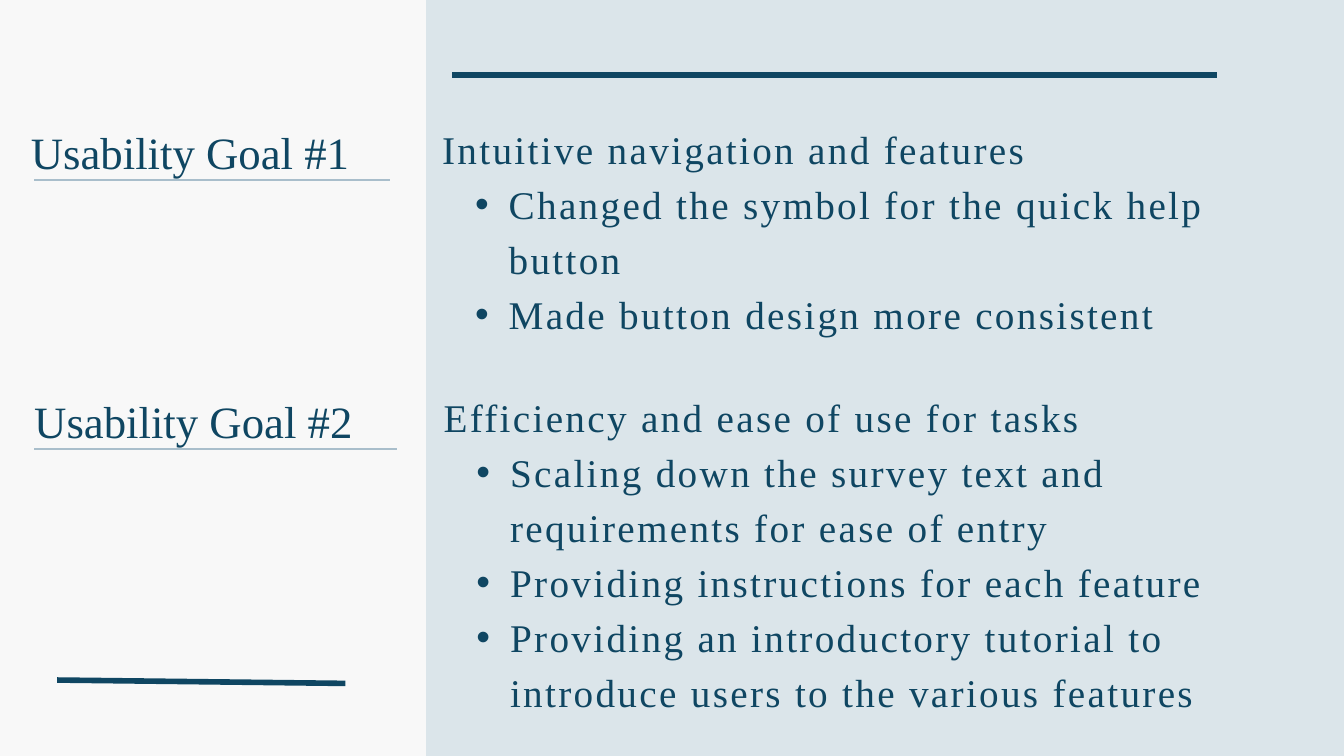
from dataclasses import dataclass

from lxml.etree import SubElement
from pptx import Presentation
from pptx.dml.color import RGBColor
from pptx.enum.shapes import MSO_CONNECTOR, MSO_SHAPE
from pptx.enum.text import MSO_AUTO_SIZE
from pptx.oxml.ns import qn
from pptx.slide import Slide
from pptx.util import Emu, Inches, Pt

# The slide is a grid of square cells, 20 columns by 11.25 rows
COLUMNS, ROWS = 20, 11.25
CELL = Inches(1)


@dataclass(frozen=True)
class Theme:
    font: str = "Times New Roman"
    page: str = "F8F8F8"
    panel: str = "DBE5EA"
    ink: str = "0F4662"
    underline: str = "A9BECB"
    heading_size: float = 48
    body_size: float = 42
    line_share: float = 1.4
    body_tracking: float = 2.5
    bar_width: float = 6
    underline_width: float = 2.25


@dataclass(frozen=True)
class Rule:
    start: tuple[float, float]
    end: tuple[float, float]
    color: str
    width: float


@dataclass(frozen=True)
class Area:
    left: float
    top: float
    width: float
    height: float


@dataclass(frozen=True)
class Goal:
    heading: str
    heading_area: Area
    underline_end: float
    underline_row: float
    summary: str
    points: tuple[str, ...]
    body_area: Area


THEME = Theme()
PANEL_LEFT = 6.34
UNDERLINE_LEFT = 0.51
BULLET_INDENT, BULLET_HANG = 0.99, 0.5

BARS = (
    Rule((0.85, 10.12), (5.14, 10.17), THEME.ink, THEME.bar_width),
    Rule((6.73, 1.12), (18.11, 1.12), THEME.ink, THEME.bar_width),
)

GOALS = (
    Goal(
        "Usability Goal #1", Area(0.46, 1.73, 5.73, 0.9), 5.81, 2.68,
        "Intuitive navigation and features",
        (
            "Changed the symbol for the quick help button",
            "Made button design more consistent",
        ),
        Area(6.58, 1.75, 12.77, 3.22),
    ),
    Goal(
        "Usability Goal #2", Area(0.51, 5.72, 5.83, 0.9), 5.91, 6.68,
        "Efficiency and ease of use for tasks",
        (
            "Scaling down the survey text and requirements for ease of entry",
            "Providing instructions for each feature",
            "Providing an introductory tutorial to introduce users to the various features",
        ),
        Area(6.6, 5.74, 12.29, 4.84),
    ),
)


def cells(count: float) -> Emu:
    return Emu(round(count * CELL))


def draw_panel(page: Slide) -> None:
    panel = page.shapes.add_shape(
        MSO_SHAPE.RECTANGLE, cells(PANEL_LEFT), 0, cells(COLUMNS - PANEL_LEFT), cells(ROWS)
    )
    panel.shadow.inherit = False
    panel.fill.solid()
    panel.fill.fore_color.rgb = RGBColor.from_string(THEME.panel)
    panel.line.fill.background()


def draw_rule(page: Slide, rule: Rule) -> None:
    line = page.shapes.add_connector(
        MSO_CONNECTOR.STRAIGHT, *(cells(place) for place in rule.start + rule.end)
    )
    line.line.color.rgb = RGBColor.from_string(rule.color)
    line.line.width = Pt(rule.width)
    SubElement(line._element.spPr, qn("a:effectLst"))


def add_bullet(para) -> None:
    properties = para._p.get_or_add_pPr()
    formats = {"marL": cells(BULLET_INDENT), "indent": -cells(BULLET_HANG), "lvl": 1}
    for name, value in formats.items():
        properties.set(name, str(int(value)))
    SubElement(properties, qn("a:buFont")).set("typeface", "Arial")
    SubElement(properties, qn("a:buChar")).set("char", "•")


def draw_text(
    page: Slide, area: Area, lead: str, size: float,
    points: tuple[str, ...] = (), tracking: float = 0,
) -> None:
    box = page.shapes.add_textbox(
        cells(area.left), cells(area.top), cells(area.width), cells(area.height)
    )
    frame = box.text_frame
    frame_formats = {
        "word_wrap": True, "auto_size": MSO_AUTO_SIZE.SHAPE_TO_FIT_TEXT,
        "margin_left": 0, "margin_top": 0, "margin_right": 0, "margin_bottom": 0,
    }
    for name, value in frame_formats.items():
        setattr(frame, name, value)

    for index, words in enumerate((lead, *points)):
        para = frame.add_paragraph() if index else frame.paragraphs[0]
        para.line_spacing = Pt(size * THEME.line_share)
        if index:
            add_bullet(para)
        span = para.add_run()
        span.text = words
        for name, value in {"name": THEME.font, "size": Pt(size)}.items():
            setattr(span.font, name, value)
        span.font.color.rgb = RGBColor.from_string(THEME.ink)
        if tracking:
            span._r.get_or_add_rPr().set("spc", str(round(tracking * 100)))


def draw_goal(page: Slide, goal: Goal) -> None:
    draw_rule(page, Rule(
        (UNDERLINE_LEFT, goal.underline_row), (goal.underline_end, goal.underline_row),
        THEME.underline, THEME.underline_width,
    ))
    draw_text(page, goal.heading_area, goal.heading, THEME.heading_size)
    draw_text(
        page, goal.body_area, goal.summary, THEME.body_size, goal.points, THEME.body_tracking
    )


def main() -> None:
    deck = Presentation()
    deck.slide_width, deck.slide_height = cells(COLUMNS), cells(ROWS)
    page = deck.slides.add_slide(deck.slide_layouts[6])

    # Background and side panel
    page.background.fill.solid()
    page.background.fill.fore_color.rgb = RGBColor.from_string(THEME.page)
    draw_panel(page)

    # Decorative bars
    for bar in BARS:
        draw_rule(page, bar)

    # Goals with their improvements
    for goal in GOALS:
        draw_goal(page, goal)

    deck.save("out.pptx")


if __name__ == "__main__":
    main()
